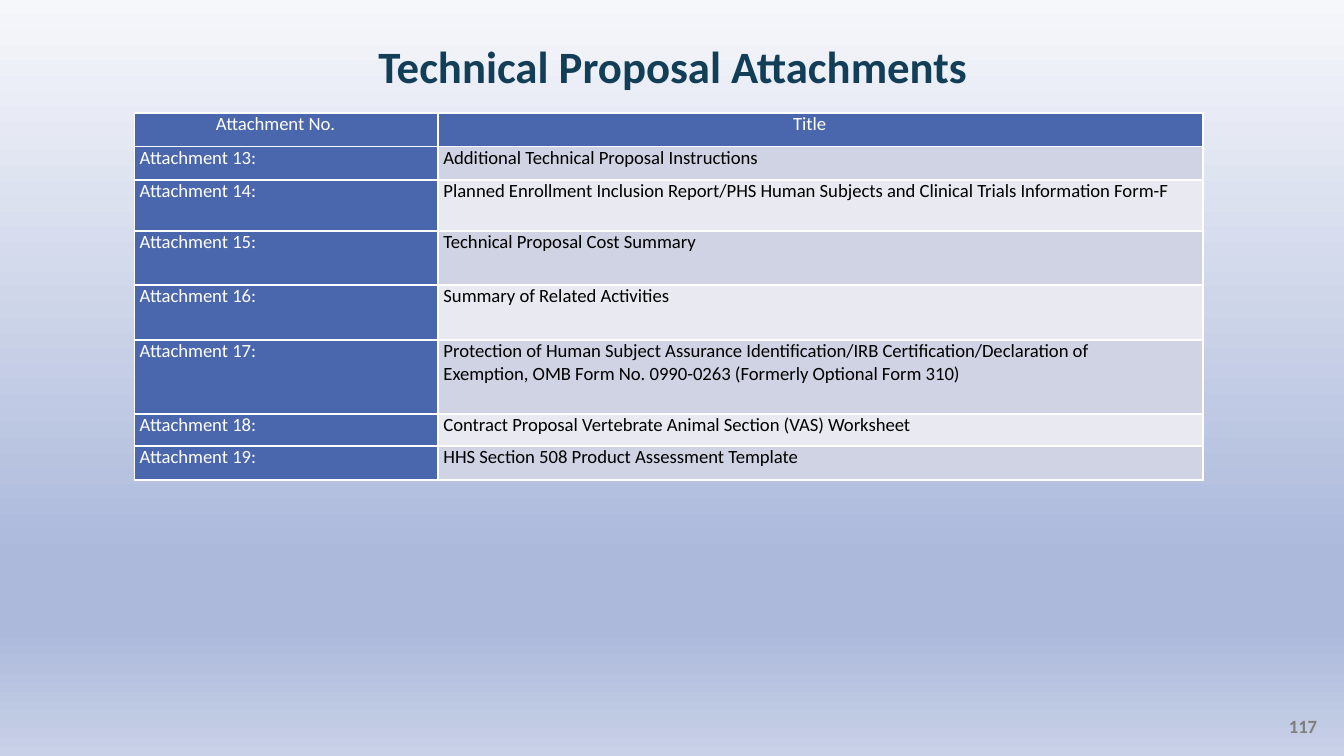
from copy import deepcopy

from lxml import etree
from pptx import Presentation
from pptx import util as u
from pptx.dml.color import RGBColor
from pptx.enum import text
from pptx.oxml import ns

WHITE = RGBColor(0xFF, 0xFF, 0xFF)
BLACK = RGBColor(0, 0, 0)
NAVY = RGBColor(0x12, 0x3E, 0x57)
BLUE = RGBColor(0x4A, 0x66, 0xAC)
GRAY = RGBColor(0x7F, 0x7F, 0x7F)
BANDS = [RGBColor(0xE9, 0xEA, 0xF1), RGBColor(0xD0, 0xD3, 0xE3)]
BACKGROUND = [
    (0, RGBColor(0xF6, 0xF7, 0xFB)),
    (0.74, RGBColor(0xAC, 0xB9, 0xDB)),
    (0.83, RGBColor(0xAC, 0xB9, 0xDB)),
    (1, RGBColor(0xC8, 0xD1, 0xE7)),
]
FONT = "Calibri"
TITLE = "Technical Proposal Attachments"
PAGE = "117"
HEADER = ("Attachment No.", "Title")
FIRST_NUMBER = 13
ATTACHMENTS = [
    "Additional Technical Proposal Instructions",
    "Planned Enrollment Inclusion Report/PHS Human Subjects and Clinical Trials Information Form-F",
    "Technical Proposal Cost Summary",
    "Summary of Related Activities",
    "Protection of Human Subject Assurance Identification/IRB Certification/Declaration of "
    "Exemption, OMB Form No. 0990-0263 (Formerly Optional Form 310)",
    "Contract Proposal Vertebrate Animal Section (VAS) Worksheet",
    "HHS Section 508 Product Assessment Template",
]
SLIDE_WIDTH = 10
SLIDE_HEIGHT = SLIDE_WIDTH * 9 / 16
COLUMN_WIDTHS = [2.26, 5.69]
ROW_HEIGHTS = [0.25, 0.25, 0.38, 0.4, 0.41, 0.55, 0.24, 0.25]
LONG_TEXT = 100


def box(left, top, width, height):
    return [u.Inches(value) for value in (left, top, width, height)]


def write(frame, content, size, color, align, bold=False):
    frame.text = content
    frame.word_wrap = True
    paragraph = frame.paragraphs[0]
    paragraph.alignment = align
    font = paragraph.runs[0].font
    font.name, font.size, font.bold = FONT, u.Pt(size), bold
    font.color.rgb = color
    return paragraph


def clear_margins(frame):
    frame.margin_left = frame.margin_top = frame.margin_right = frame.margin_bottom = 0


def paint_background(slide):
    fill = slide.background.fill
    fill.gradient()
    fill.gradient_angle = 270
    stop_list = slide._element.find(".//" + ns.qn("a:gsLst"))
    while len(stop_list) < len(BACKGROUND):
        stop_list.append(deepcopy(stop_list[0]))
    for stop, (position, color) in zip(fill.gradient_stops, BACKGROUND):
        stop.position = position
        stop.color.rgb = color


def add_borders(cell):
    properties = cell._tc.get_or_add_tcPr()
    for index, side in enumerate(("lnL", "lnR", "lnT", "lnB")):
        line = etree.Element(ns.qn("a:" + side), w=str(u.Pt(1)))
        fill = etree.SubElement(line, ns.qn("a:solidFill"))
        etree.SubElement(fill, ns.qn("a:srgbClr"), val=str(WHITE))
        properties.insert(index, line)


def add_attachment_table(slide):
    rows = [HEADER] + [
        (f"Attachment {number}:", name)
        for number, name in enumerate(ATTACHMENTS, FIRST_NUMBER)
    ]
    table = slide.shapes.add_table(
        len(rows), len(HEADER), *box(1, 0.84, sum(COLUMN_WIDTHS), sum(ROW_HEIGHTS))
    ).table
    for column, width in zip(table.columns, COLUMN_WIDTHS):
        column.width = u.Inches(width)
    for row, height in zip(table.rows, ROW_HEIGHTS):
        row.height = u.Inches(height)
    for row_index, row in enumerate(rows):
        for column_index, content in enumerate(row):
            cell = table.cell(row_index, column_index)
            is_header = row_index == 0
            is_label = is_header or column_index == 0
            cell.margin_left = u.Inches(0.04)
            cell.margin_right = u.Inches(0.4 if len(content) > LONG_TEXT else 0.2)
            cell.margin_top = cell.margin_bottom = 0
            cell.fill.solid()
            cell.fill.fore_color.rgb = BLUE if is_label else BANDS[row_index % 2]
            align = text.PP_ALIGN.CENTER if is_header else text.PP_ALIGN.LEFT
            write(cell.text_frame, content, 10, WHITE if is_label else BLACK, align)
            add_borders(cell)


def main():
    presentation = Presentation()
    presentation.slide_width = u.Inches(SLIDE_WIDTH)
    presentation.slide_height = u.Inches(SLIDE_HEIGHT)
    slide = presentation.slides.add_slide(presentation.slide_layouts[5])
    paint_background(slide)

    title = slide.shapes.title
    title.left, title.top, title.width, title.height = box(0.54, 0.34, 8.93, 0.35)
    clear_margins(title.text_frame)
    title.text_frame.vertical_anchor = text.MSO_ANCHOR.BOTTOM
    paragraph = write(title.text_frame, TITLE, 24, NAVY, text.PP_ALIGN.CENTER, True)
    paragraph.line_spacing = 0.9

    add_attachment_table(slide)

    page = slide.shapes.add_textbox(*box(9.46, 5.32, 0.34, 0.2))
    clear_margins(page.text_frame)
    write(page.text_frame, PAGE, 10, GRAY, text.PP_ALIGN.RIGHT, True)
    presentation.save("out.pptx")


if __name__ == "__main__":
    main()
